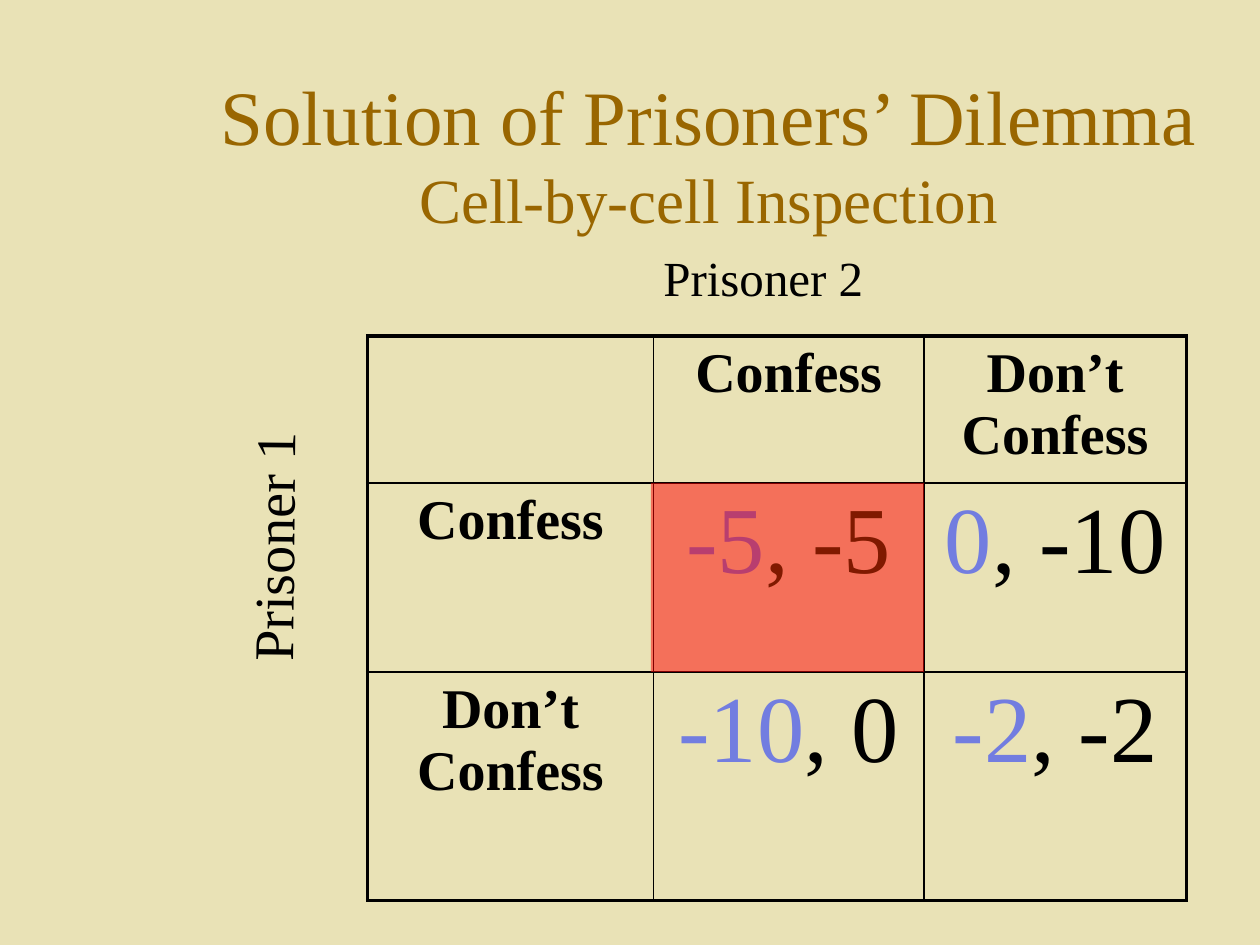
from pptx import Presentation
from pptx import util as u
from pptx.dml.color import RGBColor
from pptx.enum import shapes, text
from pptx.oxml.ns import qn
from lxml import etree

COLORS = {"paper": "E9E2B6", "title": "996600", "ink": "000000",
          "first": "727DE0", "dark": "003300", "mark": "FF0000"}
FONT = "Times New Roman"
COLUMNS, ROWS = 120, 90


def rgb(name):
    return RGBColor.from_string(COLORS[name])


class Deck:
    def __init__(self):
        self.prs = Presentation()
        self.prs.slide_width, self.prs.slide_height = u.Inches(10), u.Inches(7.5)

    def add_slide(self):
        self.s = self.prs.slides.add_slide(self.prs.slide_layouts[6])
        self.s.background.fill.solid()
        self.s.background.fill.fore_color.rgb = rgb("paper")

    def x(self, columns):
        return round(self.prs.slide_width * columns / COLUMNS)

    def y(self, rows):
        return round(self.prs.slide_height * rows / ROWS)

    def box(self, left, top, width, height):
        return self.x(left), self.y(top), self.x(width), self.y(height)

    def style(self, font, size, color="ink", bold=False):
        font.name, font.size, font.bold = FONT, u.Pt(size), bold
        font.color.rgb = rgb(color)

    def title(self, place, lines):
        tf = self.s.shapes.add_textbox(*self.box(*place)).text_frame
        tf.word_wrap = True
        tf.vertical_anchor = text.MSO_ANCHOR.MIDDLE
        p = tf.paragraphs[0]
        p.alignment = text.PP_ALIGN.CENTER
        for i, (words, size) in enumerate(lines):
            if i:
                p.add_line_break()
            r = p.add_run()
            r.text = words
            self.style(r.font, size, "title")

    def label(self, place, words, size, rotation=0):
        sp = self.s.shapes.add_textbox(*self.box(*place))
        sp.rotation = rotation
        tf = sp.text_frame
        tf.word_wrap = False
        if rotation:
            tf.vertical_anchor = text.MSO_ANCHOR.MIDDLE
        p = tf.paragraphs[0]
        p.text = words
        self.style(p.font, size)

    def border(self, cell, side, width):
        tc_pr = cell._tc.get_or_add_tcPr()
        line = etree.SubElement(tc_pr, qn(f"a:ln{side}"), w=str(u.Pt(width)))
        fill = etree.SubElement(line, qn("a:solidFill"))
        etree.SubElement(fill, qn("a:srgbClr"), val=COLORS["ink"])

    def fill_cell(self, cell, content):
        p = cell.text_frame.paragraphs[0]
        p.alignment = text.PP_ALIGN.CENTER
        if isinstance(content, str):
            cell.fill.background()
            p.text = content
            self.style(p.font, 32, bold=True)
            return
        cell.fill.solid()
        cell.fill.fore_color.rgb = rgb("paper")
        first, second, color = content
        for words, tone in ((first, "first"), (f", {second}", color)):
            r = p.add_run()
            r.text = words
            self.style(r.font, 54, tone)

    def matrix(self, left, top, widths, heights, rows):
        place = self.box(left, top, sum(widths), sum(heights))
        table = self.s.shapes.add_table(len(heights), len(widths), *place).table
        table.first_row = table.horz_banding = False
        for column, width in zip(table.columns, widths):
            column.width = self.x(width)
        for row, height in zip(table.rows, heights):
            row.height = self.y(height)
        last_row, last_column = len(heights) - 1, len(widths) - 1
        for i, row in enumerate(rows):
            for j, content in enumerate(row):
                cell = table.cell(i, j)
                outer = {"L": j == 0, "R": j == last_column,
                         "T": i == 0, "B": i == last_row}
                for side, is_outer in outer.items():
                    self.border(cell, side, 2.25 if is_outer else 1)
                self.fill_cell(cell, content)

    def highlight(self, place, color, opacity):
        sp = self.s.shapes.add_shape(shapes.MSO_SHAPE.RECTANGLE, *self.box(*place))
        sp.shadow.inherit = False
        sp.line.fill.background()
        sp.fill.solid()
        sp.fill.fore_color.rgb = rgb(color)
        tone = sp.fill._xPr.find(f".//{qn('a:srgbClr')}")
        etree.SubElement(tone, qn("a:alpha"), val=str(opacity * 1000))


def main():
    deck = Deck()
    deck.add_slide()
    deck.title((18, 7, 99, 15), [("Solution of Prisoners’ Dilemma", 44),
                                 ("Cell-by-cell Inspection", 36)])
    deck.matrix(35, 32, (27.25, 25.75, 25), (14, 18, 21.75), [
        ("", "Confess", "Don’t Confess"),
        ("Confess", ("-5", "-5", "dark"), ("0", "-10", "ink")),
        ("Don’t Confess", ("-10", "0", "ink"), ("-2", "-2", "ink")),
    ])
    deck.label((62, 23, 22.2, 6.8), "Prisoner 2", 28)
    deck.label((13.3, 47.8, 25.2, 7.5), "Prisoner 1", 32, rotation=270.6)
    deck.highlight((62, 46, 26, 18), "mark", 50)
    deck.prs.save("out.pptx")


if __name__ == "__main__":
    main()
